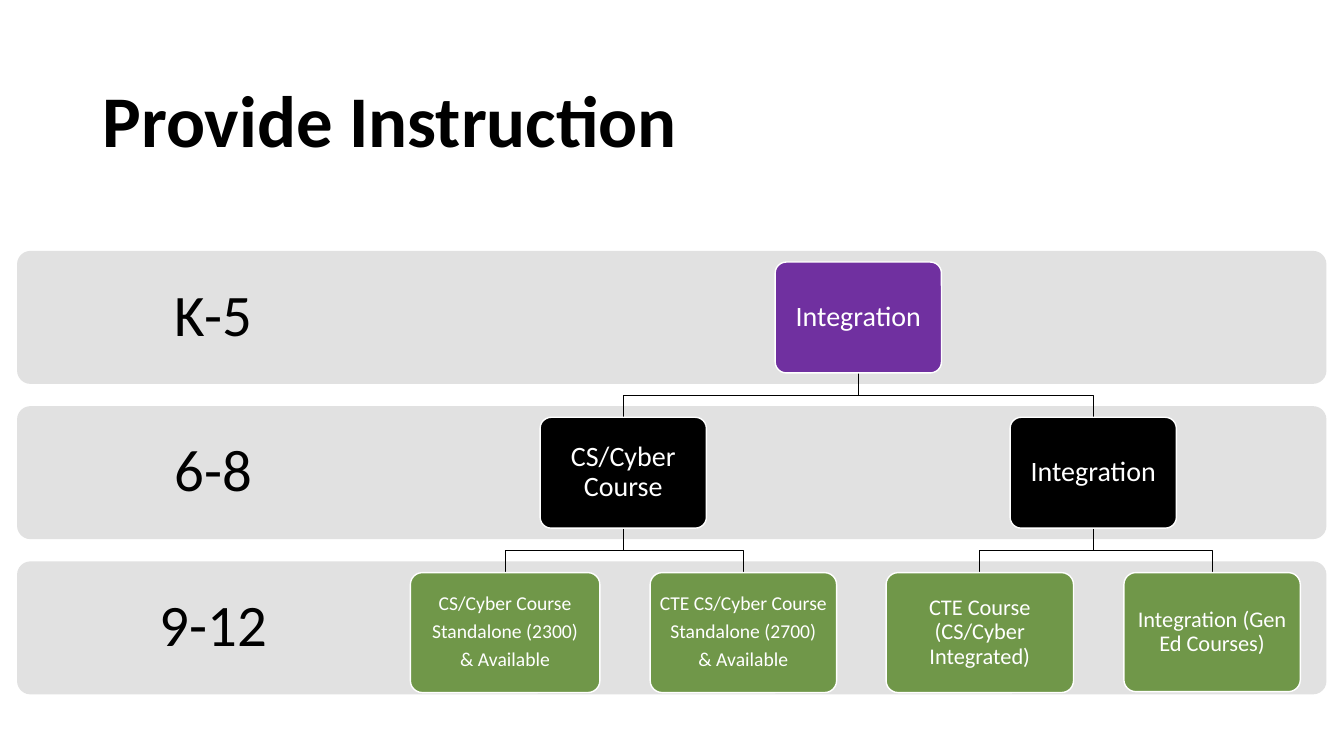
from pptx import Presentation
from pptx.dml.color import RGBColor
from pptx.enum.shapes import MSO_SHAPE
from pptx.enum.text import MSO_ANCHOR, MSO_AUTO_SIZE, PP_ALIGN
from pptx.util import Pt

ROUNDED = MSO_SHAPE.ROUNDED_RECTANGLE
MIDDLE = MSO_ANCHOR.MIDDLE
CENTER, LEFT = PP_ALIGN.CENTER, PP_ALIGN.LEFT
NO_FIT = MSO_AUTO_SIZE.NONE

COLORS = {
    "text": "000000",
    "white": "FFFFFF",
    "band": "E1E1E1",
    "primary": "7030A0",
    "middle": "000000",
    "high": "709749",
}
FONT = "Calibri"
BAND_HEIGHT, BAND_PITCH, NODE_OFFSET = 95, 110.9, 8
GRADES = ["K-5", "6-8", "9-12"]

# level, center, width, height, fill, size, text
NODES = {
    "root": (0, 613.1, 118.8, 79.2, "primary", 20, "Integration"),
    "course": (1, 445.2, 118.8, 79.2, "middle", 20, "CS/Cyber Course"),
    "integration": (1, 780.9, 118.8, 79.2, "middle", 20, "Integration"),
    "standalone": (2, 360.8, 135.4, 85.7, "high", 14,
                   "CS/Cyber Course\nStandalone (2300)\n& Available"),
    "cte_standalone": (2, 531, 133.2, 85.7, "high", 14,
                       "CTE CS/Cyber Course\nStandalone (2700)\n& Available"),
    "cte_integrated": (2, 699.9, 133.9, 85.7, "high", 16,
                       "CTE Course (CS/Cyber Integrated)"),
    "general": (2, 865.8, 126, 85, "high", 16, "Integration (Gen Ed Courses)"),
}
BRANCHES = {
    "root": ["course", "integration"],
    "course": ["standalone", "cte_standalone"],
    "integration": ["cte_integrated", "general"],
}


def color(name):
    return RGBColor.from_string(COLORS[name])


def write_text(box, text, size, shade, inset, align=CENTER, after=0.35, bold=False):
    frame = box.text_frame
    frame.text = text
    frame.word_wrap = True
    frame.auto_size = NO_FIT
    frame.vertical_anchor = MIDDLE
    frame.margin_left = frame.margin_right = Pt(inset)
    frame.margin_top = frame.margin_bottom = Pt(inset)
    for para in frame.paragraphs:
        para.alignment = align
        para.line_spacing = 0.9
        para.space_after = Pt(round(after * size, 1))
        for span in para.runs:
            span.font.name = FONT
            span.font.size = Pt(size)
            span.font.bold = bold
            span.font.color.rgb = color(shade)


def add_rounded(page, left, top, width, height, fill):
    box = page.shapes.add_shape(ROUNDED, Pt(left), Pt(top), Pt(width), Pt(height))
    box.adjustments[0] = 0.1
    box.shadow.inherit = False
    box.fill.solid()
    box.fill.fore_color.rgb = color(fill)
    return box


def add_title(page, left, top, width, height):
    title = page.shapes.title
    title.left, title.top = Pt(left), Pt(top)
    title.width, title.height = Pt(width), Pt(height)
    write_text(title, "Provide Instruction", 52, "text", 7.2, LEFT, 0.12, True)


def add_bands(page, left, top, width):
    for level, grade in enumerate(GRADES):
        band_top = top + level * BAND_PITCH
        band = add_rounded(page, left, band_top, width, BAND_HEIGHT, "band")
        band.line.fill.background()
        label = page.shapes.add_textbox(
            Pt(left), Pt(band_top), Pt(width * 0.3), Pt(BAND_HEIGHT))
        write_text(label, grade, 42, "text", 24)


def add_branch(page, start_x, start_y, end_x, end_y):
    bend_y = (start_y + end_y) / 2
    builder = page.shapes.build_freeform(Pt(start_x), Pt(start_y))
    builder.add_line_segments(
        [(Pt(x), Pt(y)) for x, y in
         [(start_x, bend_y), (end_x, bend_y), (end_x, end_y)]], close=False)
    branch = builder.convert_to_shape()
    branch.shadow.inherit = False
    branch.fill.background()
    branch.line.color.rgb = color("text")
    branch.line.width = Pt(0.5)


def add_tree(page, top):
    def node_top(level):
        return top + level * BAND_PITCH + NODE_OFFSET

    for parent, children in BRANCHES.items():
        level, center, _, height = NODES[parent][:4]
        for child in children:
            child_level, child_center = NODES[child][:2]
            add_branch(page, center, node_top(level) + height,
                       child_center, node_top(child_level))
    for level, center, width, height, fill, size, text in NODES.values():
        node = add_rounded(page, center - width / 2, node_top(level), width, height, fill)
        node.line.color.rgb = color("white")
        node.line.width = Pt(1)
        write_text(node, text, size, "white", size * 0.28)


def main():
    deck = Presentation()
    deck.slide_width, deck.slide_height = Pt(960), Pt(540)
    page = deck.slides.add_slide(deck.slide_layouts[5])
    add_title(page, 66, 44, 828, 89.3)
    add_bands(page, 12.2, 179.2, 935.3)
    add_tree(page, 179.2)
    deck.save("out.pptx")


if __name__ == "__main__":
    main()
